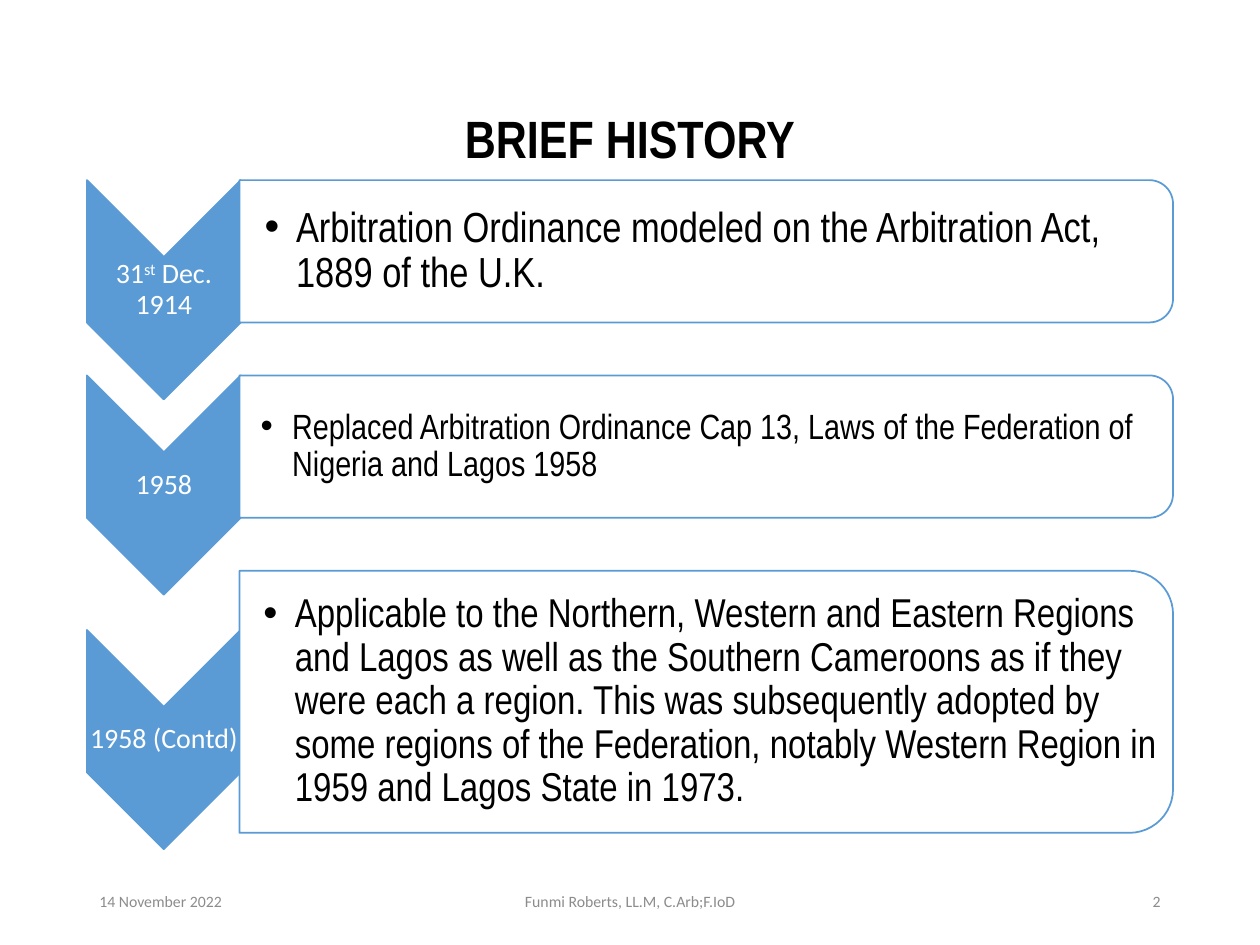
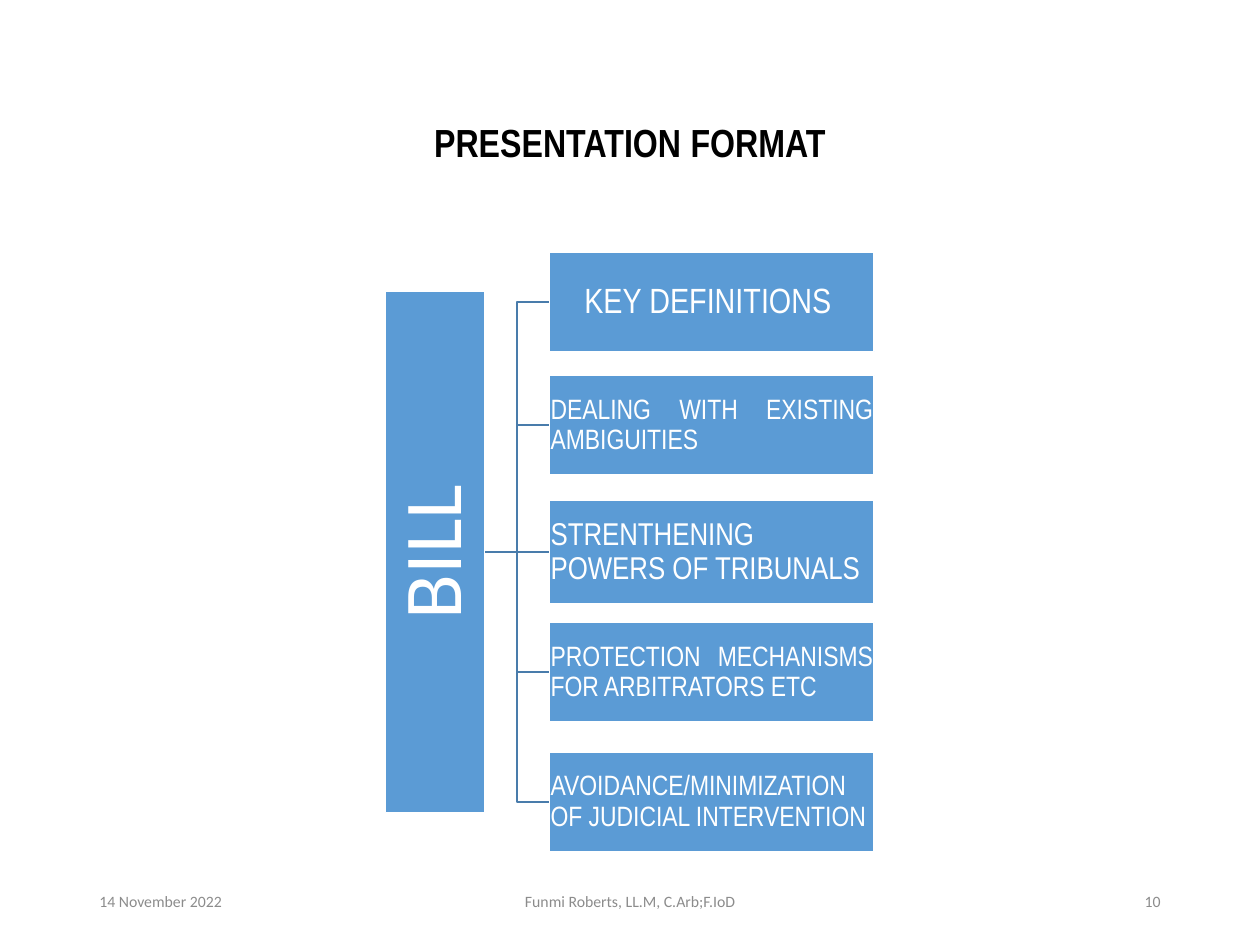
from lxml.etree import SubElement
from pptx import Presentation
from pptx.dml.color import RGBColor
from pptx.enum.shapes import MSO_CONNECTOR, MSO_SHAPE
from pptx.enum.text import MSO_ANCHOR, MSO_AUTO_SIZE, PP_ALIGN
from pptx.oxml.ns import qn
from pptx.util import Inches, Pt

BLUE = RGBColor(0x5B, 0x9B, 0xD5)
STEEL = RGBColor(0x49, 0x7C, 0xAB)
WHITE = RGBColor(0xFF, 0xFF, 0xFF)
BLACK = RGBColor(0x00, 0x00, 0x00)
GRAY = RGBColor(0x8C, 0x8C, 0x8C)
NARROW = "Arial Narrow"
LEFT, MID, RIGHT, JUST = (PP_ALIGN.LEFT, PP_ALIGN.CENTER,
                          PP_ALIGN.RIGHT, PP_ALIGN.JUSTIFY)


def write(shape, words, size, color=BLACK, font=NARROW, align=LEFT, bold=None,
          pad=None, left=None, lead=0.9, bullet=False, small=False):
    """Fill a shape with one paragraph; words between ^ marks are raised."""
    frame = shape.text_frame
    frame.word_wrap = True
    frame.auto_size = MSO_AUTO_SIZE.NONE
    frame.vertical_anchor = MSO_ANCHOR.MIDDLE
    if pad is not None:
        frame.margin_top = frame.margin_bottom = frame.margin_right = Inches(pad)
        frame.margin_left = Inches(pad if left is None else left)
    para = frame.paragraphs[0]
    para.alignment = align
    para.line_spacing = lead
    if bullet:
        props = para._p.get_or_add_pPr()
        props.set("marL", str(Inches(0.25)))
        props.set("indent", str(-Inches(0.25)))
        SubElement(props, qn("a:buFont")).set("typeface", "Arial")
        SubElement(props, qn("a:buChar")).set("char", "•")
    for i, part in enumerate(words.split("^")):
        run = para.add_run()
        run.text = part
        face = run.font
        face.name, face.size, face.bold = font, Pt(size), bold
        face.color.rgb = color
        if i % 2:
            run._r.get_or_add_rPr().set("baseline", "30000")
        if small:
            run._r.get_or_add_rPr().set("cap", "small")


def label(slide, x, y, w, h, words, size, **form):
    box = slide.shapes.add_textbox(Inches(x), Inches(y), Inches(w), Inches(h))
    write(box, words, size, **form)


def block(slide, kind, x, y, w, h, fill=BLUE, line=BLUE):
    shape = slide.shapes.add_shape(kind, Inches(x), Inches(y), Inches(w), Inches(h))
    shape.shadow.inherit = False
    shape.fill.solid()
    shape.fill.fore_color.rgb = fill
    shape.line.color.rgb = line
    shape.line.width = Pt(1)
    return shape


def turned(slide, kind, x, y, w, h, **paint):
    """Place a shape turned by 90 degrees so that it covers x, y, w, h."""
    shift = (w - h) / 2
    block(slide, kind, x + shift, y - shift, h, w, **paint).rotation = 90


def join(slide, start, end, kind):
    link = slide.shapes.add_connector(kind, 0, 0, 0, 0)
    link.begin_connect(start, 3)
    link.end_connect(end, 1)
    link.line.color.rgb = STEEL
    link.line.width = Pt(1)
    SubElement(link._element.spPr, qn("a:effectLst"))


def page(deck, title, size, number, small=False):
    """Add a slide with its title and footer."""
    slide = deck.slides.add_slide(deck.slide_layouts[5])
    head = slide.shapes.title
    head.left, head.top = Inches(0.69), Inches(0.4)
    head.width, head.height = Inches(8.62), Inches(1.45)
    write(head, title, size, align=MID, bold=True, small=small)
    for x, w, words, align in (
            (0.69, 2.25, "14 November 2022", LEFT),
            (3.31, 3.38, "Funmi Roberts, LL.M, C.Arb;F.IoD", MID),
            (7.06, 2.25, number, RIGHT)):
        label(slide, x, 6.95, w, 0.4, words, 9, color=GRAY, font="Calibri",
              align=align, lead=1.0)
    return slide


def event(slide, top, tall, mark, date, words, size, left):
    """Dated chevron at mark, beside a rounded panel at top."""
    turned(slide, MSO_SHAPE.CHEVRON, 0.69, mark, 1.22, 1.74)
    label(slide, 0.69, mark + 0.61, 1.22, 0.52, date, 16, color=WHITE,
          font="Calibri", align=MID, pad=0.01)
    turned(slide, MSO_SHAPE.ROUND_2_SAME_RECTANGLE, 1.9, top, 7.41, tall, fill=WHITE)
    gap = 0.05 * tall
    label(slide, 1.91, top + gap, 7.41 - gap, tall - 2 * gap, words, size,
          pad=0.02, left=left, bullet=True)


def history(deck):
    slide = page(deck, "BRIEF HISTORY", 30, "2")
    event(slide, 1.43, 1.13, 1.43, "31^st^ Dec. 1914",
          "Arbitration Ordinance modeled on the Arbitration Act, 1889 of the U.K.",
          24, 0.19)
    event(slide, 2.98, 1.13, 2.98, "1958",
          "Replaced Arbitration Ordinance Cap 13, Laws of the Federation of "
          "Nigeria and Lagos 1958", 20, 0.16)
    event(slide, 4.53, 2.08, 5.0, "1958 (Contd)",
          "Applicable to the Northern, Western and Eastern Regions and Lagos as "
          "well as the Southern Cameroons as if they were each a region. This was "
          "subsequently adopted by some regions of the Federation, notably "
          "Western Region in 1959 and Lagos State in 1973.", 23, 0.18)


def outline(deck):
    slide = page(deck, "presentation format", 28, "10", small=True)
    # Root bar with upward text
    root = block(slide, MSO_SHAPE.RECTANGLE, 3.06, 2.31, 0.79, 4.14, line=WHITE)
    write(root, "BILL", 47, color=WHITE, font="Calibri", align=MID, pad=0.03)
    root.text_frame._txBody.bodyPr.set("vert", "vert270")
    # Topics, each joined to the root
    for top, tall, words, size, align in (
            (2.0, 0.79, "KEY DEFINITIONS ", 20, MID),
            (2.98, 0.79, "DEALING WITH EXISTING AMBIGUITIES", 16, JUST),
            (3.97, 0.82, "STRENTHENING POWERS OF TRIBUNALS", 18, JUST),
            (4.94, 0.79, "PROTECTION MECHANISMS FOR ARBITRATORS ETC", 16, JUST),
            (5.97, 0.79, "AVOIDANCE/MINIMIZATION OF JUDICIAL INTERVENTION", 16, JUST)):
        topic = block(slide, MSO_SHAPE.RECTANGLE, 4.36, top, 2.58, tall, line=WHITE)
        write(topic, words, size, color=WHITE, align=align, pad=0.01)
        level = top == 3.97
        join(slide, root, topic,
             MSO_CONNECTOR.STRAIGHT if level else MSO_CONNECTOR.ELBOW)


def main():
    deck = Presentation()
    deck.slide_width, deck.slide_height = Inches(10), Inches(7.5)
    history(deck)
    outline(deck)
    deck.save("out.pptx")


if __name__ == "__main__":
    main()
